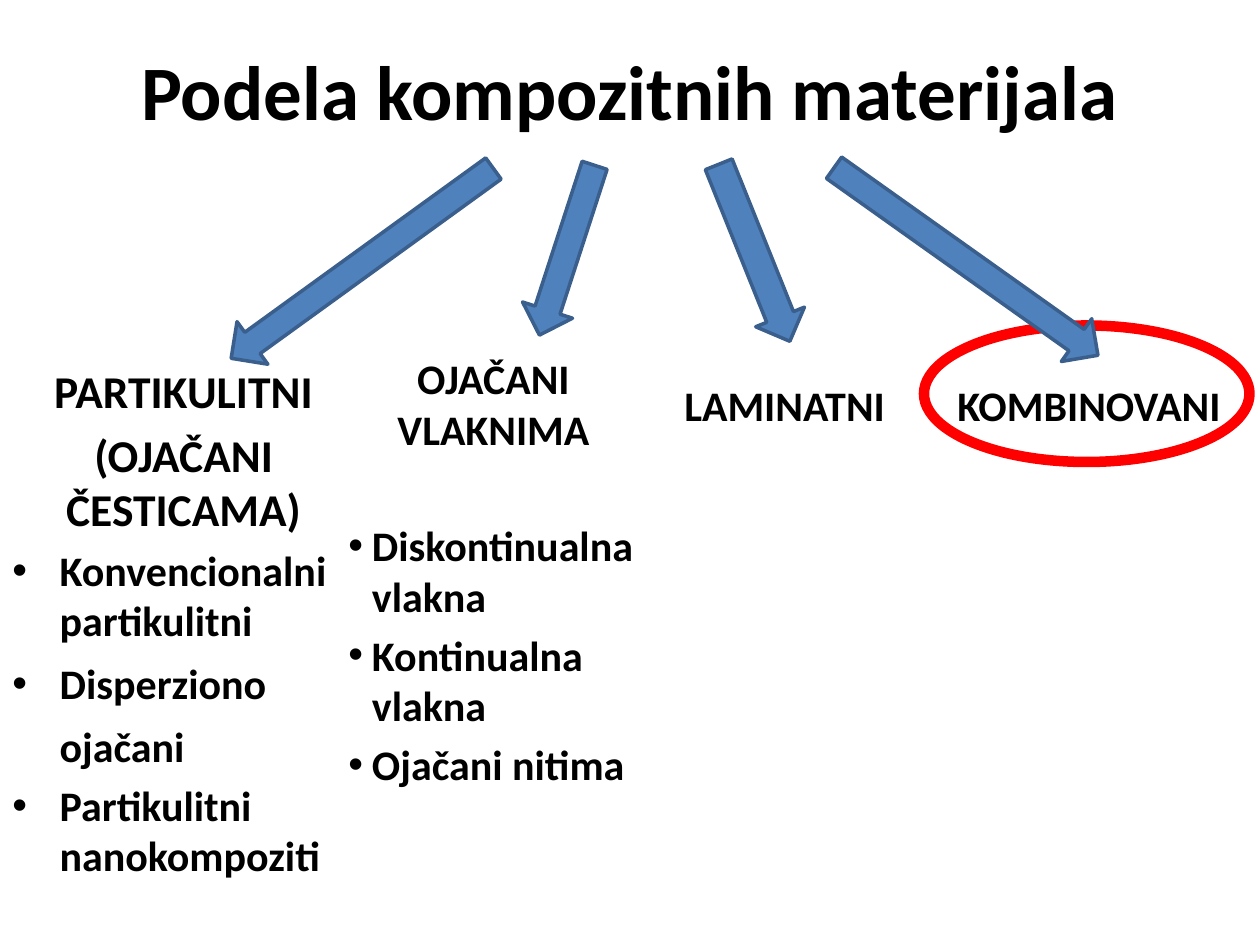
from lxml import etree
from pptx import Presentation
from pptx.dml.color import RGBColor
from pptx.enum.shapes import MSO_SHAPE
from pptx.enum.text import MSO_ANCHOR, PP_ALIGN
from pptx.oxml.ns import qn
from pptx.util import Pt

ARROW, ELLIPSE = MSO_SHAPE.RIGHT_ARROW, MSO_SHAPE.OVAL
CENTER, LEFT = PP_ALIGN.CENTER, PP_ALIGN.LEFT
BLACK = RGBColor(0, 0, 0)
BLUE = RGBColor(0x4F, 0x81, 0xBD)
NAVY = RGBColor(0x3A, 0x5F, 0x8C)
RED = RGBColor(255, 0, 0)
FONT = "Calibri"

TITLE = "Podela kompozitnih materijala"
HEAD, BULLET = "head", "bullet"
COLUMNS = [
    {"box": (0, 204, 210, 306), "indent": 27, "paragraphs": [
        (HEAD, "PARTIKULITNI", 26, {}),
        (HEAD, "(OJAČANI ČESTICAMA)", 26, {}),
        (BULLET, "Konvencionalni partikulitni", 24, {}),
        (BULLET, "Disperziono ojačani", 24, {"line": 36, "before": 0}),
        (BULLET, "Partikulitni nanokompoziti", 24, {})]},
    {"box": (192, 198, 180, 294), "indent": 13.5, "paragraphs": [
        (HEAD, "OJAČANI VLAKNIMA", 24, {}),
        (BULLET, "Diskontinualna vlakna", 24, {"before": 38}),
        (BULLET, "Kontinualna vlakna", 24, {}),
        (BULLET, "Ojačani nitima", 24, {})]},
    {"box": (384, 204, 138, 264), "indent": 0, "paragraphs": [
        (None, "LAMINATNI", 24, {"line": 38})]},
    {"box": (540, 204, 174, 264), "indent": 0, "paragraphs": [
        (None, "KOMBINOVANI", 24, {"line": 38})]},
]
ARROW_HEIGHT = 30
ARROWS = [
    (273, 128, 102, 108, 0.5),
    (114.5, 135.5, 185, 144.1, 0.5),
    (376.5, 129.5, 109, 68.1, 0.55),
]
LAST_ARROW = (459.5, 134.5, 185, 35.4, 0.5)
RING = (528, 186, 186, 78)


def set_font(p, size):
    f = p.font
    f.name, f.size, f.bold = FONT, Pt(size), True
    f.color.rgb = BLACK


def add_bullet(p, indent):
    pPr = p._p.get_or_add_pPr()
    pPr.set("marL", str(Pt(indent)))
    pPr.set("indent", str(-Pt(indent)))
    bu_font = etree.Element(qn("a:buFont"), typeface="Arial")
    bu_char = etree.Element(qn("a:buChar"), char="•")
    at = pPr.index(pPr.find(qn("a:defRPr")))
    pPr.insert(at, bu_font)
    pPr.insert(at + 1, bu_char)


def add_column(s, column):
    tf = s.shapes.add_textbox(*map(Pt, column["box"])).text_frame
    tf.word_wrap = True
    for i, (kind, text, size, spacing) in enumerate(column["paragraphs"]):
        p = tf.add_paragraph() if i else tf.paragraphs[0]
        p.text = text
        p.alignment = CENTER if kind == HEAD else LEFT
        if i:
            p.space_before = Pt(spacing.get("before", size * 0.2))
        if "line" in spacing:
            p.line_spacing = Pt(spacing["line"])
        set_font(p, size)
        if kind == BULLET:
            add_bullet(p, column["indent"])


def add_outlined(s, kind, box, color, width):
    sp = s.shapes.add_shape(kind, *map(Pt, box))
    sp.shadow.inherit = False
    sp.line.color.rgb = color
    sp.line.width = Pt(width)
    return sp


def add_arrow(s, left, top, length, angle, shaft):
    sp = add_outlined(s, ARROW, (left, top, length, ARROW_HEIGHT), NAVY, 2)
    sp.fill.solid()
    sp.fill.fore_color.rgb = BLUE
    sp.adjustments[0] = shaft
    sp.rotation = angle


prs = Presentation()
prs.slide_width, prs.slide_height = Pt(720), Pt(540)
s = prs.slides.add_slide(prs.slide_layouts[5])

title = s.shapes.title
title.left, title.top, title.width, title.height = map(Pt, (36, 6, 648, 90))
tf = title.text_frame
tf.text = TITLE
tf.vertical_anchor = MSO_ANCHOR.MIDDLE
tf.paragraphs[0].alignment = CENTER
set_font(tf.paragraphs[0], 44)

for column in COLUMNS[:-1]:
    add_column(s, column)
for arrow in ARROWS:
    add_arrow(s, *arrow)
add_outlined(s, ELLIPSE, RING, RED, 6).fill.background()
add_arrow(s, *LAST_ARROW)
add_column(s, COLUMNS[-1])

prs.save("out.pptx")
